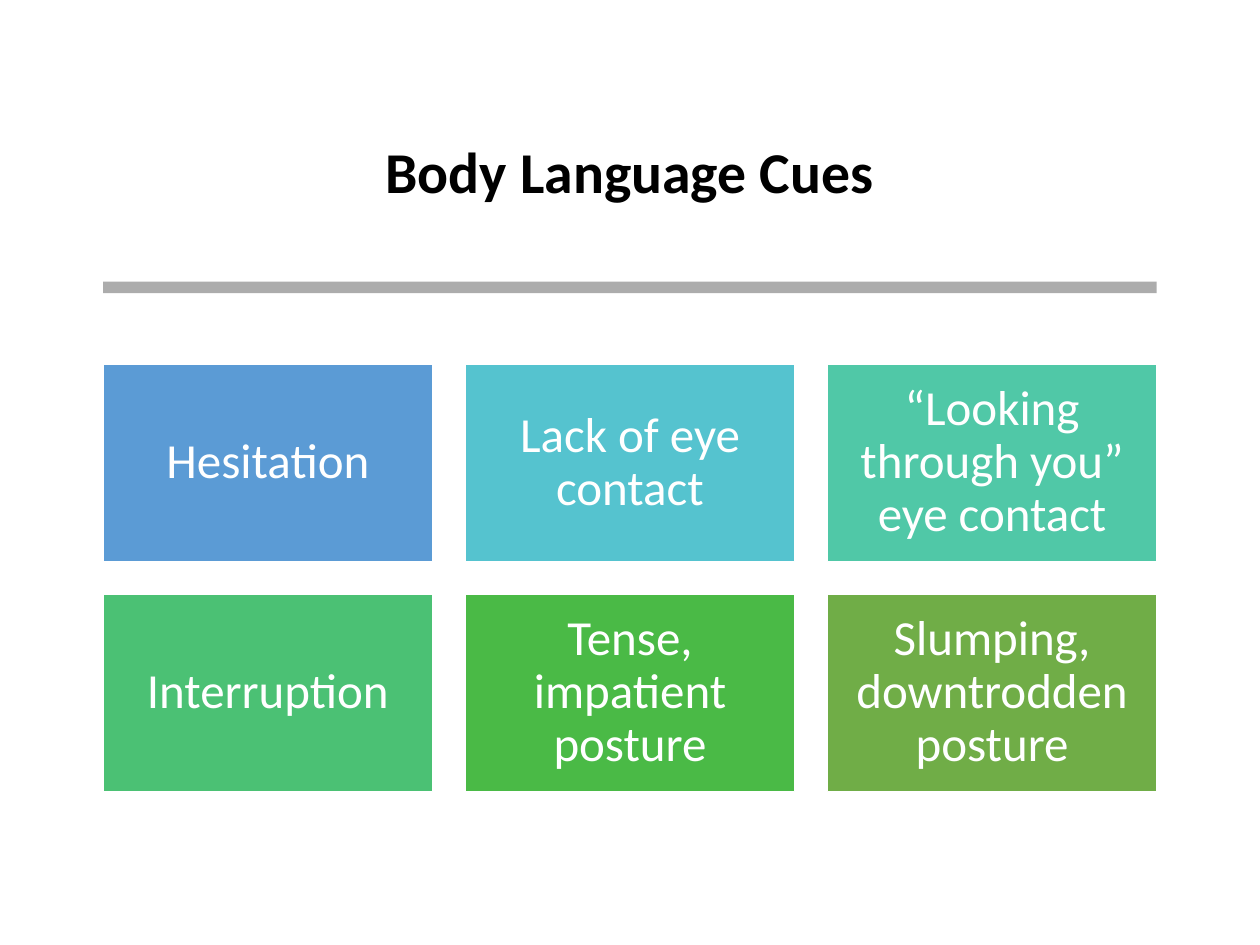
from dataclasses import dataclass

from lxml import etree
from pptx import Presentation
from pptx.dml.color import RGBColor
from pptx.enum.shapes import MSO_SHAPE
from pptx.enum.text import MSO_ANCHOR, PP_ALIGN
from pptx.oxml.ns import qn
from pptx.util import Cm, Pt

RECTANGLE = MSO_SHAPE.RECTANGLE
MIDDLE = MSO_ANCHOR.MIDDLE
CENTER = PP_ALIGN.CENTER


@dataclass(frozen=True)
class Theme:
    font: str = "Calibri"
    title_size: int = 33
    card_size: int = 28
    title_color: str = "000000"
    card_text: str = "FFFFFF"
    card_line: str = "FFFFFF"
    rule: str = "808080"
    rule_opacity: int = 65


THEME = Theme()

# Card text and fill, in reading order
CARDS = [
    ("Hesitation", "5B9BD5"),
    ("Lack of eye contact", "55C3CF"),
    ("“Looking through you” eye contact", "50C8A7"),
    ("Interruption", "4BC174"),
    ("Tense, impatient posture", "4ABA46"),
    ("Slumping, downtrodden posture", "70AD47"),
]

# Card grid, in centimetres
COLUMNS = 3
GRID_LEFT, GRID_TOP = 2.08, 7.34
CARD_WIDTH, CARD_HEIGHT, GAP = 6.64, 3.98, 0.66
GRID_WIDTH = COLUMNS * CARD_WIDTH + (COLUMNS - 1) * GAP


def write_text(shape, text, *, size, color, bold=False, margin=0.25):
    frame = shape.text_frame
    frame.word_wrap = True
    frame.vertical_anchor = MIDDLE
    frame.margin_left = frame.margin_right = Cm(margin)
    frame.margin_top = frame.margin_bottom = Cm(margin)
    paragraph = frame.paragraphs[0]
    paragraph.alignment = CENTER
    paragraph.line_spacing = 0.9
    run = paragraph.add_run()
    run.text = text
    run.font.name = THEME.font
    run.font.size = Pt(size)
    run.font.bold = bold
    run.font.color.rgb = RGBColor.from_string(color)


def add_block(slide, left, top, width, height, fill):
    shape = slide.shapes.add_shape(
        RECTANGLE, Cm(left), Cm(top), Cm(width), Cm(height))
    shape.shadow.inherit = False
    shape.fill.solid()
    shape.fill.fore_color.rgb = RGBColor.from_string(fill)
    shape.line.fill.background()
    return shape


def add_title(slide, text):
    box = slide.shapes.add_textbox(Cm(1.81), Cm(1.68), Cm(21.77), Cm(3.68))
    write_text(box, text, size=THEME.title_size, color=THEME.title_color,
               bold=True)


def add_rule(slide):
    rule = add_block(slide, GRID_LEFT, 5.68, GRID_WIDTH, 0.23, THEME.rule)
    color = rule.fill._xPr.find(qn("a:solidFill"))[0]
    etree.SubElement(color, qn("a:alpha"), val=str(THEME.rule_opacity * 1000))


def add_card(slide, index, text, fill):
    row, column = divmod(index, COLUMNS)
    card = add_block(
        slide,
        GRID_LEFT + column * (CARD_WIDTH + GAP),
        GRID_TOP + row * (CARD_HEIGHT + GAP),
        CARD_WIDTH, CARD_HEIGHT, fill)
    card.line.color.rgb = RGBColor.from_string(THEME.card_line)
    card.line.width = Pt(1)
    write_text(card, text, size=THEME.card_size, color=THEME.card_text,
               margin=0.3)


def main():
    presentation = Presentation()
    presentation.slide_width = Cm(25.4)
    presentation.slide_height = Cm(19.05)
    slide = presentation.slides.add_slide(presentation.slide_layouts[6])

    # Heading and divider
    add_title(slide, "Body Language Cues")
    add_rule(slide)

    # Grid of cues
    for index, (text, fill) in enumerate(CARDS):
        add_card(slide, index, text, fill)

    presentation.save("out.pptx")


if __name__ == "__main__":
    main()
